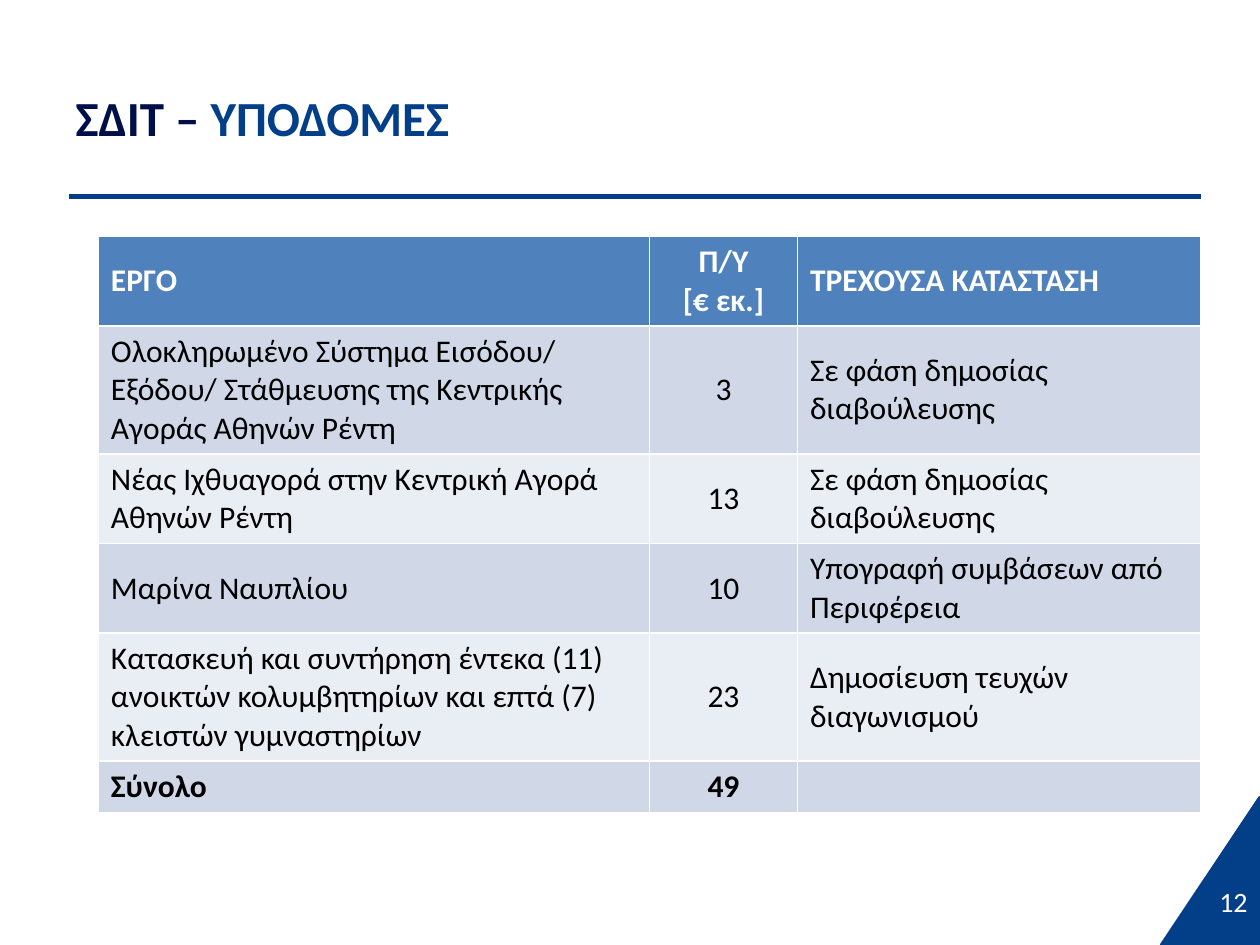
from pptx import Presentation
from pptx import util as u
from pptx.dml import color
from pptx.enum import shapes, text
from pptx.oxml import ns
from lxml import etree

Pt = u.Pt
HEX = {
    "blue": "023F88", "navy": "000F47", "header": "4F81BD", "band": "D0D8E8",
    "light": "E9EDF4", "white": "FFFFFF", "black": "000000",
}
RGB = {name: color.RGBColor.from_string(value) for name, value in HEX.items()}


def add_run(paragraph, words, size, shade, bold=False):
    run = paragraph.add_run()
    run.text = words
    run.font.name = "Calibri"
    run.font.size = Pt(size)
    run.font.bold = bold
    run.font.color.rgb = RGB[shade]


deck = Presentation()
deck.slide_width, deck.slide_height = Pt(720), Pt(540)
slide = deck.slides.add_slide(deck.slide_layouts[5])

corner = slide.shapes.add_shape(
    shapes.MSO_SHAPE.RIGHT_TRIANGLE, Pt(663.8), Pt(455.8), Pt(56.2), Pt(84.2))
corner._element.spPr.xfrm.set("flipH", "1")
corner.shadow.inherit = False
corner.fill.solid()
corner.fill.fore_color.rgb = RGB["blue"]
corner.line.color.rgb = RGB["blue"]
corner.line.width = Pt(2)

rule = slide.shapes.add_connector(
    shapes.MSO_CONNECTOR.STRAIGHT, Pt(39.6), Pt(112.3), Pt(686.2), Pt(112.3))
rule.line.color.rgb = RGB["blue"]
rule.line.width = Pt(2.75)
etree.SubElement(rule._element.spPr, ns.qn("a:effectLst"))

heading = slide.shapes.title
heading.left, heading.top, heading.width, heading.height = Pt(36), Pt(21.6), Pt(648), Pt(90)
heading.text_frame.vertical_anchor = text.MSO_ANCHOR.MIDDLE
heading_line = heading.text_frame.paragraphs[0]
heading_line.alignment = text.PP_ALIGN.LEFT
add_run(heading_line, "ΣΔΙΤ – ", 28, "navy", True)
add_run(heading_line, "ΥΠΟΔΟΜΕΣ", 28, "blue", True)

projects = [
    (2, "ΕΡΓΟ", "Π/Υ\n[€ εκ.]", "ΤΡΕΧΟΥΣΑ ΚΑΤΑΣΤΑΣΗ"),
    (3, "Ολοκληρωμένο Σύστημα Εισόδου/ Εξόδου/ Στάθμευσης της Κεντρικής Αγοράς Αθηνών Ρέντη",
     "3", "Σε φάση δημοσίας διαβούλευσης"),
    (2, "Νέας Ιχθυαγορά στην Κεντρική Αγορά Αθηνών Ρέντη",
     "13", "Σε φάση δημοσίας διαβούλευσης"),
    (2, "Μαρίνα Ναυπλίου", "10", "Υπογραφή συμβάσεων από Περιφέρεια"),
    (3, "Κατασκευή και συντήρηση έντεκα (11) ανοικτών κολυμβητηρίων και επτά (7) "
        "κλειστών γυμναστηρίων", "23", "Δημοσίευση τευχών διαγωνισμού"),
    (1, "Σύνολο", "49", ""),
]
column_widths = [315, 84.5, 230.5]
row_heights = [7.2 + 22 * lines for lines, *_ in projects]
budget = slide.shapes.add_table(
    len(projects), len(column_widths), Pt(56.2), Pt(135),
    Pt(sum(column_widths)), Pt(sum(row_heights))).table
for column, width in zip(budget.columns, column_widths):
    column.width = Pt(width)

last = len(projects) - 1
for r, (lines, *entries) in enumerate(projects):
    budget.rows[r].height = Pt(row_heights[r])
    background = "header" if r == 0 else "band" if r % 2 else "light"
    for c, entry in enumerate(entries):
        cell = budget.cell(r, c)
        cell.fill.solid()
        cell.fill.fore_color.rgb = RGB[background]
        cell.vertical_anchor = text.MSO_ANCHOR.MIDDLE
        if not entry:
            cell.text_frame.paragraphs[0].font.size = Pt(18)
            continue
        for i, words in enumerate(entry.split("\n")):
            paragraph = cell.text_frame.add_paragraph() if i else cell.text_frame.paragraphs[0]
            paragraph.alignment = text.PP_ALIGN.CENTER if c == 1 else text.PP_ALIGN.LEFT
            add_run(paragraph, words, 18, "black" if r else "white", r in (0, last))

page = slide.shapes.add_textbox(Pt(552.2), Pt(500.4), Pt(167.8), Pt(28.8)).text_frame
page.word_wrap = True
page.vertical_anchor = text.MSO_ANCHOR.MIDDLE
page.paragraphs[0].alignment = text.PP_ALIGN.RIGHT
add_run(page.paragraphs[0], "12", 16, "white")

deck.save("out.pptx")
